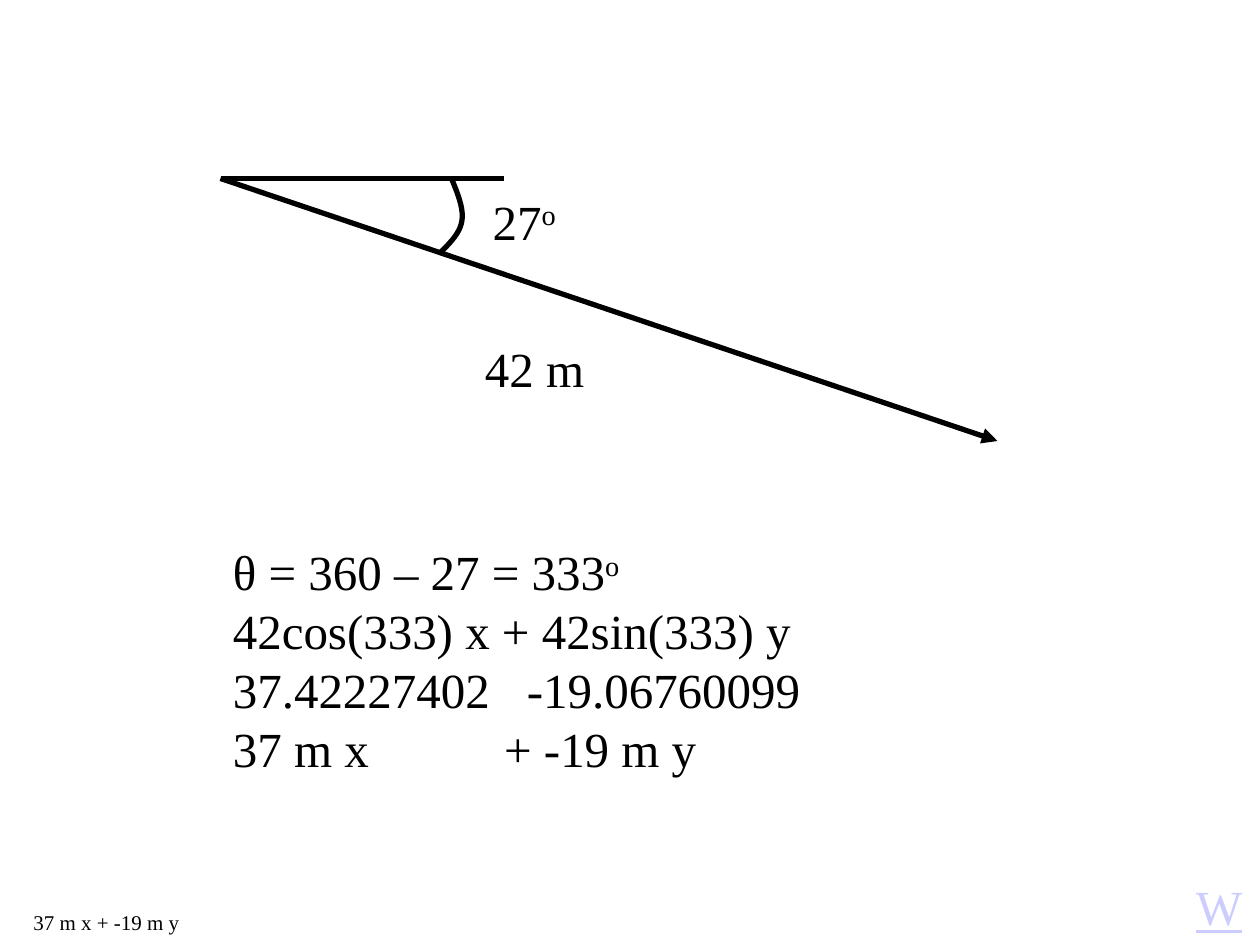
from lxml import etree
from pptx import Presentation
from pptx import util as u
from pptx.dml.color import RGBColor
from pptx.enum import shapes, text
from pptx.oxml.ns import qn

COLORS = {"ink": "000000", "link": "CCCCFF", "paper": "FFFFFF"}
FONT = "Times New Roman"


def write(p, content, size=28, color="ink", underline=None, tab=None):
    if tab:
        tabs = etree.SubElement(p._p.get_or_add_pPr(), qn("a:tabLst"))
        etree.SubElement(tabs, qn("a:tab"), pos=str(u.Pt(tab)), algn="l")
    for i, part in enumerate(content.split("^")):
        r = p.add_run()
        r.text = part
        r.font.name = FONT
        r.font.size = u.Pt(size)
        r.font.underline = underline
        r.font.color.rgb = RGBColor.from_string(COLORS[color])
        if i:
            r._r.get_or_add_rPr().set("baseline", "30000")


def bezier(a, b, c, d, steps=10):
    for i in range(1, steps + 1):
        t = i / steps
        weights = ((1 - t) ** 3, 3 * t * (1 - t) ** 2, 3 * t * t * (1 - t), t ** 3)
        yield tuple(sum(w * q[k] for w, q in zip(weights, (a, b, c, d)))
                    for k in (0, 1))


class Sketch:
    def __init__(self, s, color="ink", width=3):
        self.s, self.color, self.width = s, color, width

    def stroke(self, sp):
        sp.line.color.rgb = RGBColor.from_string(COLORS[self.color])
        sp.line.width = u.Pt(self.width)

    def label(self, x, y, w, h, *lines, tabs=None, **fmt):
        sp = self.s.shapes.add_textbox(u.Pt(x), u.Pt(y), u.Pt(w), u.Pt(h))
        tf = sp.text_frame
        tf.word_wrap = False
        tf.auto_size = text.MSO_AUTO_SIZE.SHAPE_TO_FIT_TEXT
        for i, line in enumerate(lines):
            p = tf.add_paragraph() if i else tf.paragraphs[0]
            write(p, line, tab=(tabs or {}).get(i), **fmt)

    def line(self, start, end, arrow=False):
        sp = self.s.shapes.add_connector(
            shapes.MSO_CONNECTOR.STRAIGHT, *(u.Pt(v) for v in start + end))
        self.stroke(sp)
        spPr = sp._element.spPr
        if arrow:
            etree.SubElement(spPr.find(qn("a:ln")), qn("a:tailEnd"), type="triangle")
        etree.SubElement(spPr, qn("a:effectLst"))

    def curve(self, start, *segments):
        points, a = [], start
        for b, c, d in segments:
            points += bezier(a, b, c, d)
            a = d
        fb = self.s.shapes.build_freeform(u.Pt(start[0]), u.Pt(start[1]))
        fb.add_line_segments([(u.Pt(x), u.Pt(y)) for x, y in points], close=False)
        sp = fb.convert_to_shape()
        sp.shadow.inherit = False
        sp.fill.background()
        self.stroke(sp)


def main():
    prs = Presentation()
    prs.slide_width, prs.slide_height = u.Pt(720), u.Pt(540)
    s = prs.slides.add_slide(prs.slide_layouts[6])
    s.background.fill.solid()
    s.background.fill.fore_color.rgb = RGBColor.from_string(COLORS["paper"])
    sketch = Sketch(s)

    sketch.label(12, 516, 98, 21.6, "37 m x + -19 m y", size=12)
    sketch.label(676.5, 497.5, 41, 41, "W", color="link", underline=True)

    origin = (126, 102)
    sketch.line(origin, (288, 102))
    sketch.line(origin, (570, 252), arrow=True)
    sketch.label(270, 190, 71, 41, "42 m")
    sketch.curve((258, 102),
                 ((261.5, 110.5), (265, 119), (264, 126)),
                 ((263, 133), (257.5, 138.5), (252, 144)))
    sketch.label(274.5, 106, 52, 41, "27^o")

    sketch.label(126, 306, 339, 142,
                 "θ = 360 – 27 = 333^o",
                 "42cos(333) x + 42sin(333) y",
                 "37.42227402\t-19.06760099",
                 "37 m x\t+ -19 m y",
                 tabs={2: 168, 3: 155})
    prs.save("out.pptx")


if __name__ == "__main__":
    main()
